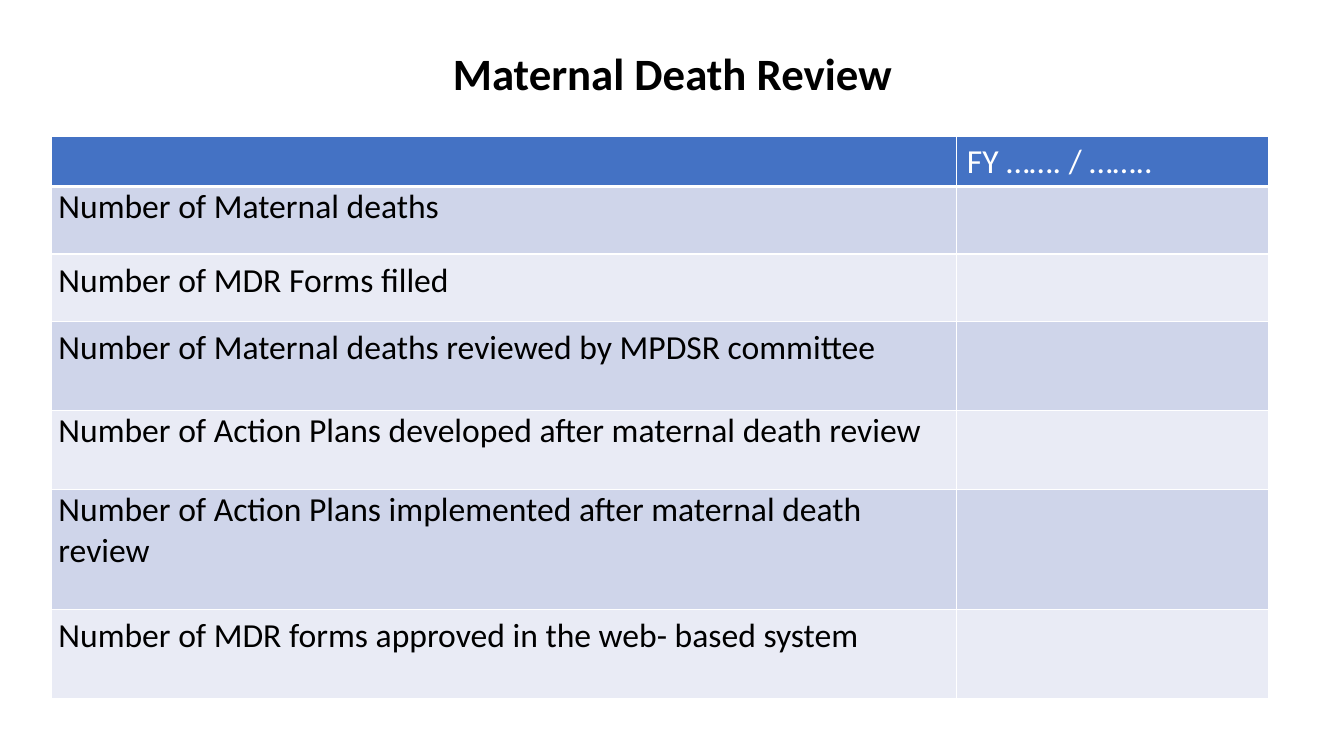
from lxml import etree
from pptx import Presentation
from pptx import util as u
from pptx.dml.color import RGBColor
from pptx.enum import text
from pptx.oxml import ns

BLACK = RGBColor(0, 0, 0)
WHITE = RGBColor(255, 255, 255)
BLUE = RGBColor(0x44, 0x72, 0xC4)
DARK = RGBColor(0xCF, 0xD5, 0xEA)
LIGHT = RGBColor(0xE9, 0xEB, 0xF5)

HEAD = "FY ……. / …….."
ROWS = [
    ("Number of Maternal deaths", 0.67, 1),
    ("Number of MDR Forms filled", 0.67, 1.15),
    ("Number of Maternal deaths reviewed by MPDSR committee", 0.88, 1.15),
    ("Number of Action Plans developed after maternal death review", 0.79, 1),
    ("Number of Action Plans implemented after maternal death review", 1.19, 1),
    ("Number of MDR forms approved in the web- based system", 0.88, 1.15),
]


class Deck:
    """Holds the style and the current slide, and draws its elements."""

    def __init__(self, font="Calibri", size=24):
        self.font, self.size = font, size
        self.prs = Presentation()
        self.prs.slide_width = u.Inches(13.33)
        self.prs.slide_height = u.Inches(7.5)
        self.slide = self.prs.slides.add_slide(self.prs.slide_layouts[6])

    def label(self, frame, words, color, size=None, bold=False, space=1):
        para = frame.paragraphs[0]
        para.text = words
        para.line_spacing = space
        for font in [para.font] + [run.font for run in para.runs]:
            font.name, font.size = self.font, u.Pt(size or self.size)
            font.bold, font.color.rgb = bold, color
        return para

    def title(self, words, left, top, width, height):
        box = self.slide.shapes.add_textbox(*map(u.Inches, (left, top, width, height)))
        frame = box.text_frame
        frame.word_wrap = True
        frame.vertical_anchor = text.MSO_ANCHOR.MIDDLE
        para = self.label(frame, words, BLACK, 32, True, 0.9)
        para.alignment = text.PP_ALIGN.CENTER

    def border(self, cell, side, width):
        props = cell._tc.get_or_add_tcPr()
        line = etree.SubElement(props, ns.qn("a:ln" + side), w=str(u.Pt(width)))
        fill = etree.SubElement(line, ns.qn("a:solidFill"))
        etree.SubElement(fill, ns.qn("a:srgbClr"), val=str(WHITE))

    def cell(self, cell, words, fill, color, space=1, top=1, base=1):
        for side, width in zip("LRTB", (1, 1, top, base)):
            self.border(cell, side, width)
        cell.fill.solid()
        cell.fill.fore_color.rgb = fill
        self.label(cell.text_frame, words, color, space=space)

    def table(self, left, top, widths, head, rows):
        heights = [0.48] + [row[1] for row in rows]
        area = map(u.Inches, (left, top, sum(widths), sum(heights)))
        grid = self.slide.shapes.add_table(len(heights), len(widths), *area).table
        for col, width in zip(grid.columns, widths):
            col.width = u.Inches(width)
        for row, height in zip(grid.rows, heights):
            row.height = u.Inches(height)
        for col, words in enumerate(("", head)):
            self.cell(grid.cell(0, col), words, BLUE, WHITE, base=3)
        for num, (words, _, space) in enumerate(rows, 1):
            fill = DARK if num % 2 else LIGHT
            edge = 3 if num == 1 else 1
            name = grid.cell(num, 0)
            name.margin_left = name.margin_right = u.Inches(0.07)
            name.margin_top = name.margin_bottom = 0
            self.cell(name, words, fill, BLACK, space, edge)
            self.cell(grid.cell(num, 1), "", fill, BLACK, top=edge)


def main():
    deck = Deck()
    deck.title("Maternal Death Review", 0.92, 0.4, 11.5, 0.71)
    deck.table(0.51, 1.35, (8.98, 3.09), HEAD, ROWS)
    deck.prs.save("out.pptx")


if __name__ == "__main__":
    main()
